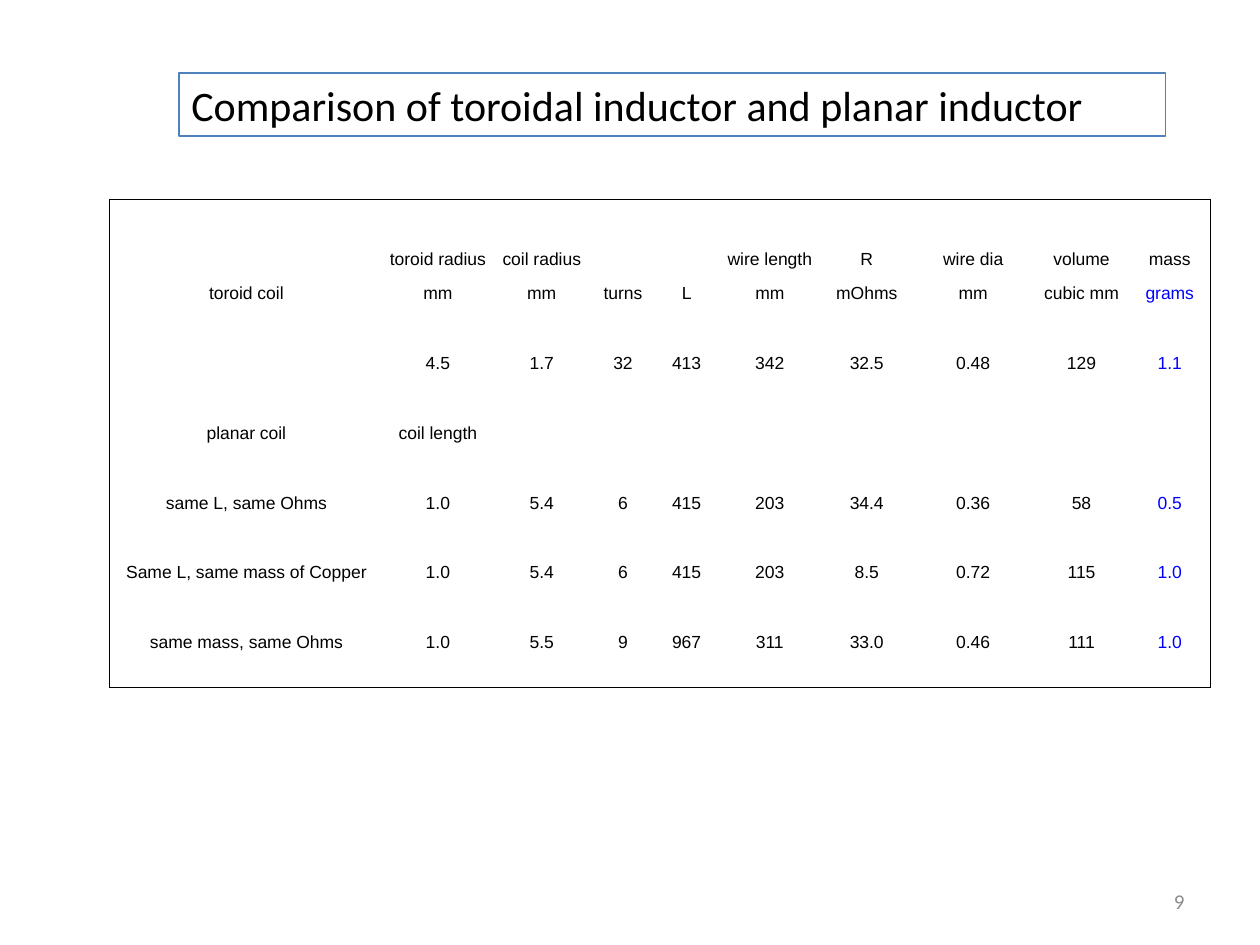
"""Build the slide comparing toroidal and planar inductors."""
from dataclasses import dataclass

import pptx
import pptx.dml.color
import pptx.enum.shapes
import pptx.enum.text
import pptx.oxml.ns
import pptx.oxml.xmlchemy
import pptx.util
from lxml import etree

Inches = pptx.util.Inches
Pt = pptx.util.Pt
Align = pptx.enum.text.PP_ALIGN
Anchor = pptx.enum.text.MSO_ANCHOR
qn = pptx.oxml.ns.qn

COLORS = {"text": "000000", "mass": "0000FF", "number": "8C8C8C", "frame": "4F81BD", "border": "000000"}
COL_WIDTHS = [2.17, 0.87, 0.78, 0.51, 0.5, 0.82, 0.72, 0.97, 0.75, 0.65]
ROW_COUNT, TABLE_HEIGHT = 14, 3.88
ROWS = {
    1: ["", "toroid radius", "coil radius", "", "", "wire length", "R", "wire dia", "volume", "mass"],
    2: ["toroid coil", "mm", "mm", "turns", "L", "mm", "mOhms", "mm", "cubic mm", "grams"],
    4: ["", "4.5", "1.7", "32", "413", "342", "32.5", "0.48", "129", "1.1"],
    6: ["planar coil", "coil length"] + [""] * 8,
    8: ["same L, same Ohms", "1.0", "5.4", "6", "415", "203", "34.4", "0.36", "58", "0.5"],
    10: ["Same L, same mass of Copper", "1.0", "5.4", "6", "415", "203", "8.5", "0.72", "115", "1.0"],
    12: ["same mass, same Ohms", "1.0", "5.5", "9", "967", "311", "33.0", "0.46", "111", "1.0"],
}
CELL_FORMAT = {
    "margin_left": Inches(0.01),
    "margin_right": Inches(0.01),
    "margin_top": Inches(0.01),
    "margin_bottom": 0,
    "vertical_anchor": Anchor.BOTTOM,
}


@dataclass
class Label:
    """Text with its font and alignment."""

    text: str
    size: float
    font: str
    color: str
    align: Align


def rgb(name: str) -> pptx.dml.color.RGBColor:
    """Return the named colour."""
    return pptx.dml.color.RGBColor.from_string(COLORS[name])


def write(tf, label: Label) -> None:
    """Write one formatted paragraph into a text frame."""
    p = tf.paragraphs[0]
    p.alignment = label.align
    if not label.text:
        etree.SubElement(p._p, qn("a:endParaRPr"), sz=str(int(label.size * 100)))
        return
    r = p.add_run()
    r.text = label.text
    for name, value in {"size": Pt(label.size), "name": label.font}.items():
        setattr(r.font, name, value)
    r.font.color.rgb = rgb(label.color)


def set_borders(cell, edges: dict[str, bool]) -> None:
    """Draw the cell edges that are on and clear the others."""
    tc_pr = cell._tc.get_or_add_tcPr()
    for side, visible in edges.items():
        ln = etree.SubElement(tc_pr, qn(f"a:ln{side}"), w=str(Pt(0.5)))
        fill = etree.SubElement(ln, qn("a:solidFill" if visible else "a:noFill"))
        if visible:
            etree.SubElement(fill, qn("a:srgbClr"), val=COLORS["border"])


def add_title(s) -> None:
    """Add the framed title."""
    sp = s.shapes.add_shape(
        pptx.enum.shapes.MSO_SHAPE.RECTANGLE, Inches(1.42), Inches(0.58), Inches(7.83), Inches(0.5)
    )
    sp.shadow.inherit = False
    sp.fill.background()
    sp.line.color.rgb = rgb("frame")
    sp.line.width = Pt(0.75)
    tf = sp.text_frame
    frame_format = {
        "word_wrap": True,
        "vertical_anchor": Anchor.TOP,
        "auto_size": pptx.enum.text.MSO_AUTO_SIZE.SHAPE_TO_FIT_TEXT,
    }
    for name, value in frame_format.items():
        setattr(tf, name, value)
    title = "Comparison of toroidal inductor and planar inductor"
    write(tf, Label(title, 24, "Calibri", "text", Align.LEFT))


def add_comparison(s) -> None:
    """Add the inductor table with its outer border."""
    last_row, last_col = ROW_COUNT - 1, len(COL_WIDTHS) - 1
    table = s.shapes.add_table(
        ROW_COUNT, len(COL_WIDTHS), Inches(0.87), Inches(1.58), Inches(sum(COL_WIDTHS)), Inches(TABLE_HEIGHT)
    ).table
    table.first_row = table.horz_banding = False
    for col, width in zip(table.columns, COL_WIDTHS):
        col.width = Inches(width)
    for i, row in enumerate(table.rows):
        row.height = Inches(TABLE_HEIGHT / ROW_COUNT)
        for j, text in enumerate(ROWS.get(i, [""] * len(COL_WIDTHS))):
            cell = table.cell(i, j)
            for name, value in CELL_FORMAT.items():
                setattr(cell, name, value)
            set_borders(cell, {"L": j == 0, "R": j == last_col, "T": i == 0, "B": i == last_row})
            cell.fill.background()
            color = "mass" if j == last_col and i > 1 else "text"
            write(cell.text_frame, Label(text, 10, "Arial", color, Align.CENTER))


def add_page_number(s) -> None:
    """Add the slide number."""
    tf = s.shapes.add_textbox(Inches(7.17), Inches(6.95), Inches(2.33), Inches(0.4)).text_frame
    tf.word_wrap = True
    tf.vertical_anchor = Anchor.MIDDLE
    write(tf, Label("9", 12, "Calibri", "number", Align.RIGHT))


def main() -> None:
    """Build and save the slide."""
    prs = pptx.Presentation()
    prs.slide_width, prs.slide_height = Inches(10), Inches(7.5)
    s = prs.slides.add_slide(prs.slide_layouts[6])
    add_page_number(s)
    add_comparison(s)
    add_title(s)
    prs.save("out.pptx")


if __name__ == "__main__":
    main()
